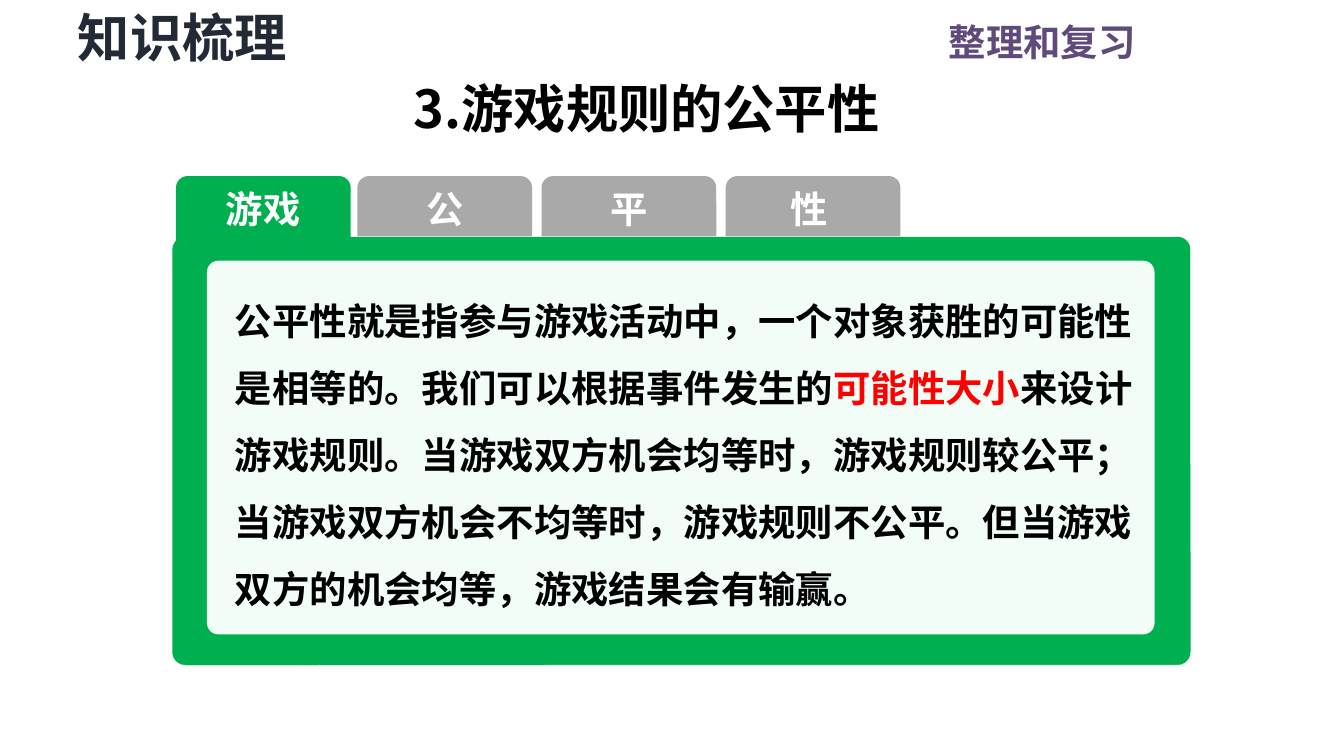
import pptx
import pptx.dml.color
import pptx.enum.shapes
import pptx.enum.text
import pptx.oxml.ns
import pptx.util
from lxml import etree

Inches = pptx.util.Inches
ALIGN = pptx.enum.text.PP_ALIGN
ANCHOR = pptx.enum.text.MSO_ANCHOR
SHAPE = pptx.enum.shapes.MSO_SHAPE
FONT = "Noto Sans CJK SC"
GREEN, GREY, WHITE, BLACK = "00B050", "A9A9A9", "FFFFFF", "000000"


def rgb(value):
    return pptx.dml.color.RGBColor.from_string(value)


def format_run(run, size, color):
    run.font.size = pptx.util.Pt(size)
    run.font.bold = True
    run.font.color.rgb = rgb(color)
    run.font.name = FONT
    east_asian = etree.SubElement(run.font._element, pptx.oxml.ns.qn("a:ea"))
    east_asian.set("typeface", FONT)


def fill_text(frame, pieces, size, align=ALIGN.LEFT, anchor=ANCHOR.TOP):
    frame.word_wrap = True
    frame.vertical_anchor = anchor
    paragraph = frame.paragraphs[0]
    paragraph.alignment = align
    for text, color in pieces:
        run = paragraph.add_run()
        run.text = text
        format_run(run, size, color)
    return paragraph


def set_margins(frame, left, top, right, bottom):
    frame.margin_left, frame.margin_top = Inches(left), Inches(top)
    frame.margin_right, frame.margin_bottom = Inches(right), Inches(bottom)


def add_text(slide, box, pieces, size, align=ALIGN.LEFT):
    frame = slide.shapes.add_textbox(*map(Inches, box)).text_frame
    fill_text(frame, pieces, size, align)
    return frame


def add_title(slide, box, text):
    title = slide.shapes.title
    title.left, title.top, title.width, title.height = map(Inches, box)
    frame = title.text_frame
    frame.auto_size = pptx.enum.text.MSO_AUTO_SIZE.NONE
    set_margins(frame, 0.07, 0.04, 0.07, 0.04)
    fill_text(frame, [(text, BLACK)], 28)


def add_block(slide, kind, box, color):
    block = slide.shapes.add_shape(kind, *map(Inches, box))
    block.shadow.inherit = False
    block.fill.solid()
    block.fill.fore_color.rgb = rgb(color)
    block.line.fill.background()
    return block


def add_tab(slide, left, label, color):
    tab = add_block(slide, SHAPE.ROUND_2_SAME_RECTANGLE, (left, 1.31, 1.3, 0.52), color)
    set_margins(tab.text_frame, 0, 0, 0, 0.06)
    fill_text(tab.text_frame, [(label, WHITE)], 20, ALIGN.CENTER, ANCHOR.MIDDLE)


def add_panel(slide, box, color):
    panel = add_block(slide, SHAPE.ROUNDED_RECTANGLE, box, color)
    panel.adjustments[0] = 0.03
    return panel


def main():
    deck = pptx.Presentation()
    deck.slide_width = Inches(10)
    deck.slide_height = deck.slide_width * 9 // 16
    slide = deck.slides.add_slide(deck.slide_layouts[5])

    add_text(slide, (5.79, 0.09, 2.76, 0.44), [("整理和复习", "604A7B")], 20, ALIGN.RIGHT)
    section = add_text(slide, (0.51, 0, 2.02, 0.55), [("知识梳理", "222A35")], 28)
    set_margins(section, 0.07, 0.04, 0.07, 0.04)
    add_title(slide, (3.01, 0.53, 4.13, 0.55), "3.游戏规则的公平性")

    for index, label in enumerate(["公", "平", "性 "]):
        add_tab(slide, 2.66 + 1.37 * index, label, GREY)

    frame = add_panel(slide, (1.28, 1.76, 7.58, 3.19), GREEN)
    frame.line.color.rgb = rgb(WHITE)
    frame.line.width = pptx.util.Pt(0.25)
    add_panel(slide, (1.54, 1.94, 7.05, 2.78), "F2FDF7")
    add_tab(slide, 1.31, "游戏", GREEN)

    explanation = add_text(slide, (1.65, 2, 6.94, 2.63), [
        ("公平性就是指参与游戏活动中，一个对象获胜的可能性是相等的。"
         "我们可以根据事件发生的", BLACK),
        ("可能性大小", "FF0000"),
        ("来设计游戏规则。当游戏双方机会均等时，游戏规则较公平；"
         "当游戏双方机会不均等时，游戏规则不公平。"
         "但当游戏双方的机会均等，游戏结果会有输赢。", BLACK),
    ], 20)
    explanation.paragraphs[0].line_spacing = 1.5

    deck.save("out.pptx")


if __name__ == "__main__":
    main()
